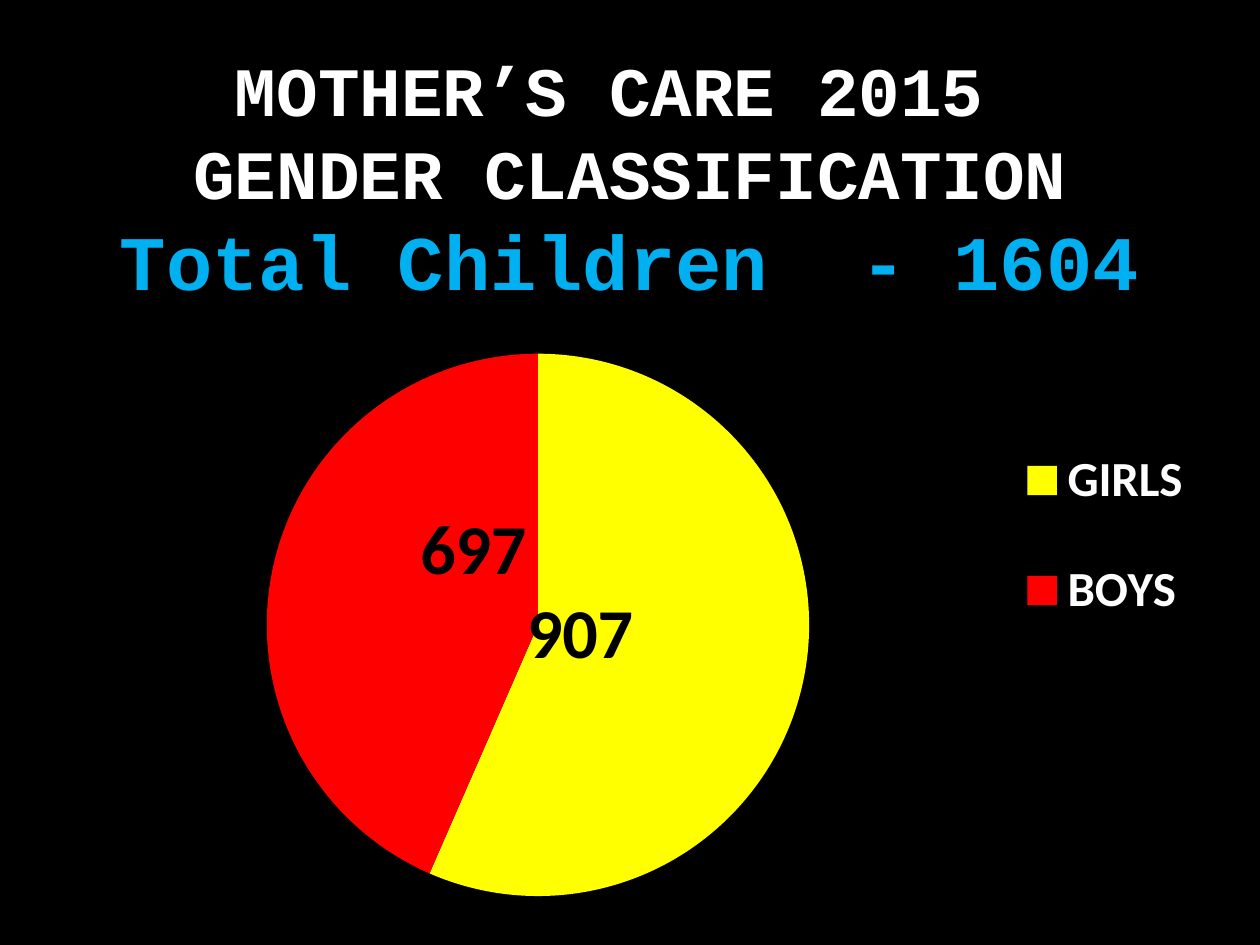
from lxml import etree
from pptx import Presentation
from pptx.chart.data import CategoryChartData
from pptx.dml.color import RGBColor
from pptx.enum.chart import XL_CHART_TYPE, XL_LABEL_POSITION, XL_LEGEND_POSITION
from pptx.enum.text import MSO_ANCHOR, PP_ALIGN
from pptx.oxml.ns import qn
from pptx.util import Pt

PIE = XL_CHART_TYPE.PIE
LABEL_CENTER = XL_LABEL_POSITION.CENTER
LEGEND_RIGHT = XL_LEGEND_POSITION.RIGHT
MIDDLE = MSO_ANCHOR.MIDDLE
CENTER = PP_ALIGN.CENTER

BLACK = RGBColor(0x00, 0x00, 0x00)
WHITE = RGBColor(0xFF, 0xFF, 0xFF)
BLUE = RGBColor(0x00, 0xB0, 0xF0)
YELLOW = RGBColor(0xFF, 0xFF, 0x00)
RED = RGBColor(0xFF, 0x00, 0x00)


def add_text(para, text, *, size, color, font="Courier New", bold=True):
    """Add a formatted span; each newline in the text becomes a line break."""
    for number, line in enumerate(text.split("\n")):
        if number:
            para.add_line_break()
        if line:
            span = para.add_run()
            span.text = line
            span.font.name = font
            span.font.size = Pt(size)
            span.font.bold = bold
            span.font.color.rgb = color


def make_layout(**values):
    """Return a manual chart layout, in fractions of the chart's size."""
    layout = etree.Element(qn("c:layout"))
    manual = etree.SubElement(layout, qn("c:manualLayout"))
    for name, value in values.items():
        etree.SubElement(manual, qn(f"c:{name}")).set("val", str(value))
    return layout


deck = Presentation()
deck.slide_width, deck.slide_height = Pt(720), Pt(540)
page = deck.slides.add_slide(deck.slide_layouts[6])
page.background.fill.solid()
page.background.fill.fore_color.rgb = BLACK

# Title
box = page.shapes.add_textbox(Pt(36), Pt(21.6), Pt(648), Pt(158.4))
box.text_frame.word_wrap = True
box.text_frame.vertical_anchor = MIDDLE
para = box.text_frame.paragraphs[0]
para.alignment = CENTER
add_text(para, "MOTHER’S CARE 2015 \nGENDER CLASSIFICATION\n", size=39.6, color=WHITE)
add_text(para, "Total Children  - 1604", size=44.1, color=BLUE)

# Pie chart
data = CategoryChartData()
data.categories = ["GIRLS", "BOYS"]
data.add_series("Series 1", [907, 697])
chart = page.shapes.add_chart(PIE, Pt(41.76), Pt(192.24), Pt(648), Pt(329.76), data).chart
chart.has_title = False
chart.font.name = "Calibri"
chart.font.size = Pt(18)
chart.font.color.rgb = BLACK
plot = chart.plots[0]
plot.vary_by_categories = True
plot_area = chart._chartSpace.chart.plotArea
for old_layout in plot_area.findall(qn("c:layout")):
    plot_area.remove(old_layout)
plot_area.insert(0, make_layout(layoutTarget="inner", xMode="edge", yMode="edge",
                                x=0.17, y=0.03, w=0.48, h=0.94))

# Slices and their values, with each label moved from the slice's middle
slices = [(YELLOW, -0.08, -0.03), (RED, 0.06, -0.08)]
for number, (color, shift_x, shift_y) in enumerate(slices):
    point = plot.series[0].points[number]
    point.format.fill.solid()
    point.format.fill.fore_color.rgb = color
    label = point.data_label
    label.font.size = Pt(40)
    label.font.bold = True
    label.font.color.rgb = BLACK
    label.position = LABEL_CENTER
for entry, (_, shift_x, shift_y) in zip(plot_area.iter(qn("c:dLbl")), slices):
    entry.insert(1, make_layout(x=shift_x, y=shift_y))

# Legend
chart.has_legend = True
legend = chart.legend
legend.position = LEGEND_RIGHT
legend.include_in_layout = False
legend.font.size = Pt(28)
legend.font.bold = True
legend.font.color.rgb = WHITE
legend_xml = chart._chartSpace.chart.find(qn("c:legend"))
for old_layout in legend_xml.findall(qn("c:layout")):
    legend_xml.remove(old_layout)
legend_xml.insert(1, make_layout(xMode="edge", yMode="edge", x=0.83, y=0.11, w=0.16, h=0.47))

deck.save("out.pptx")
